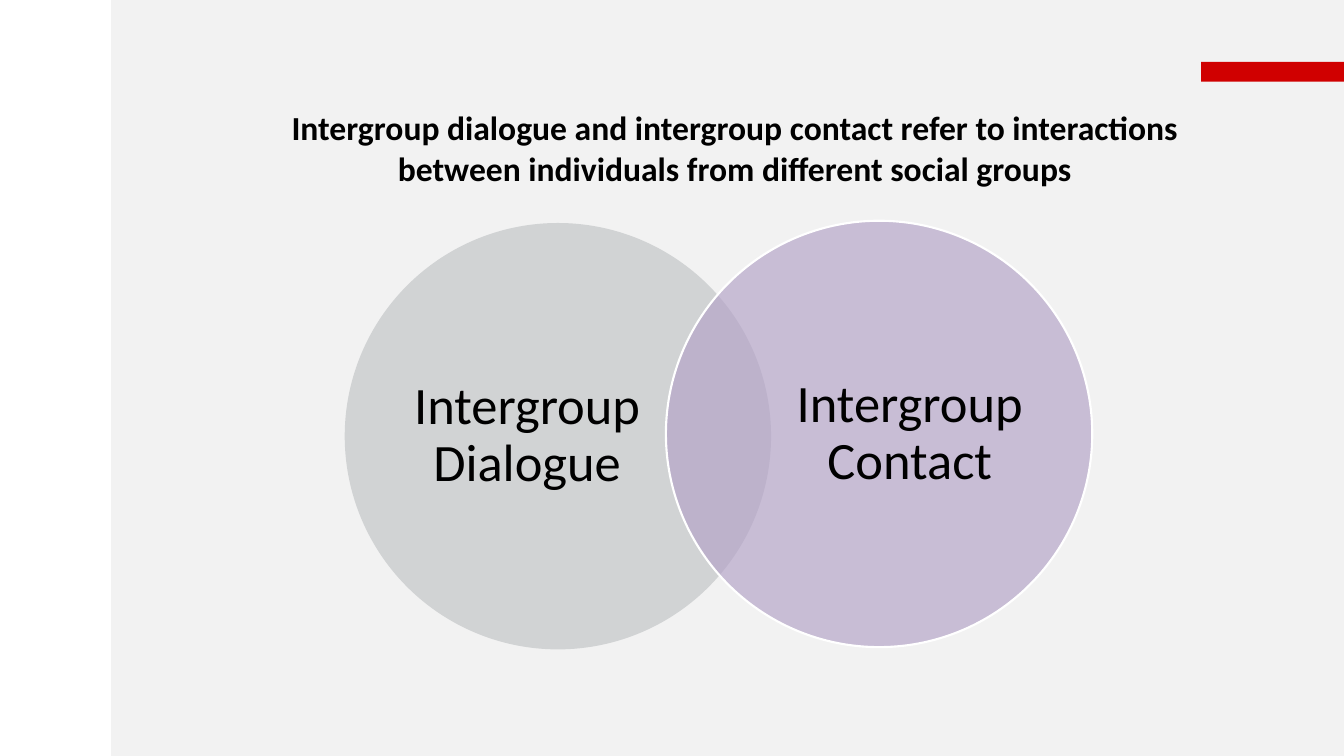
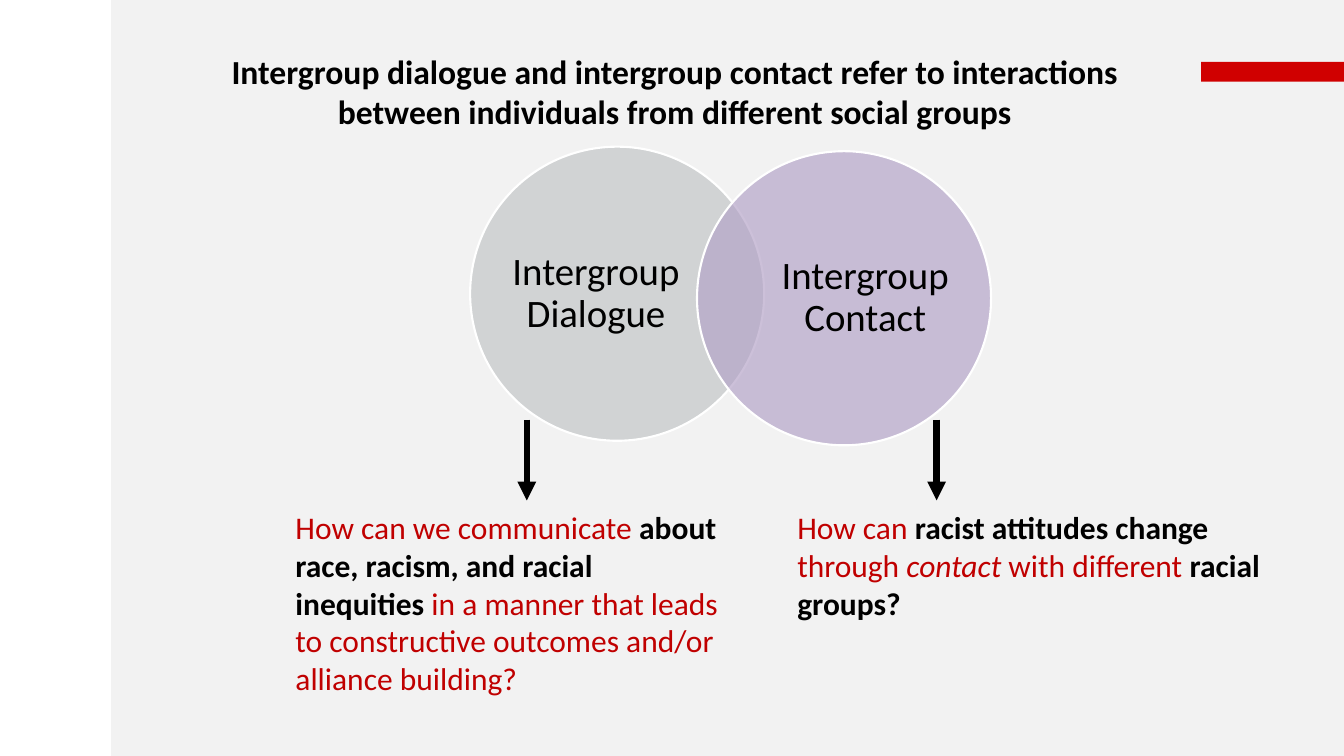
"""Build two slides on how intergroup dialogue and intergroup contact overlap."""
import lxml.etree
import pptx
import pptx.dml.color
import pptx.enum.shapes
import pptx.enum.text
import pptx.oxml
import pptx.oxml.ns
import pptx.util

FONT = "Calibri"
BLACK, WHITE, RED = "000000", "FFFFFF", "C00000"
PANEL, ACCENT, GREY, PURPLE = "F2F2F2", "D00000", "D1D3D4", "B3A2C7"
HEADLINE = ("Intergroup dialogue and intergroup contact refer to interactions "
            "between individuals from different social groups")
CENTER = pptx.enum.text.PP_ALIGN.CENTER
SHAPES = pptx.enum.shapes.MSO_SHAPE
qn = pptx.oxml.ns.qn

deck = pptx.Presentation()
deck.slide_width = pptx.util.Inches(17.78)
deck.slide_height = pptx.util.Inches(10)
title_only = deck.slide_layouts[5]
column, row = deck.slide_width / 100, deck.slide_height / 100


def rgb(color):
    return pptx.dml.color.RGBColor.from_string(color)


def place(left, top, width, height):
    return [round(v) for v in (left * column, top * row, width * column, height * row)]


# Title area, circle size in rows, text size, then (left, top, outlined, opacity) per circle
venns = [
    ((20.02, 14.2, 69.35, 15), 56.4, 50,
     [(25.65, 29.5, False, 100), (49.55, 29.2, True, 66)]),
    ((13.44, 6.7, 73.57, 11.6), 38.9, 37,
     [(34.98, 19.4, True, 100), (51.86, 20, True, 67)]),
]
groups = [("Intergroup Dialogue", GREY, 0.14), ("Intergroup Contact", PURPLE, 0.284)]

for title_area, diameter, label_size, circles in venns:
    slide = deck.slides.add_slide(title_only)
    headline = slide.shapes.title
    headline.left, headline.top, headline.width, headline.height = place(*title_area)
    frame = headline.text_frame
    frame.text = HEADLINE
    frame.word_wrap = True
    frame.auto_size = pptx.enum.text.MSO_AUTO_SIZE.NONE
    frame.vertical_anchor = pptx.enum.text.MSO_ANCHOR.TOP
    frame.margin_left = frame.margin_right = frame.margin_top = frame.margin_bottom = 0
    sentence = frame.paragraphs[0]
    sentence.alignment = CENTER
    sentence.font.name, sentence.font.size = FONT, pptx.util.Pt(32)
    sentence.font.bold, sentence.font.color.rgb = True, rgb(BLACK)

    side = diameter * row / column
    for (left, top, outlined, opacity), (name, color, inset) in zip(circles, groups):
        circle = slide.shapes.add_shape(SHAPES.OVAL, *place(left, top, side, diameter))
        circle.shadow.inherit = False
        circle.fill.solid()
        circle.fill.fore_color.rgb = rgb(color)
        if opacity < 100:
            tint = circle.element.spPr.find(qn("a:solidFill"))[0]
            lxml.etree.SubElement(tint, qn("a:alpha"), val=str(opacity * 1000))
        if outlined:
            circle.line.color.rgb = rgb(WHITE)
            circle.line.width = pptx.util.Pt(2)
        else:
            circle.line.fill.background()

        label = slide.shapes.add_textbox(*place(
            left + inset * side, top + 0.118 * diameter, 0.576 * side, 0.764 * diameter))
        frame = label.text_frame
        frame.text = name
        frame.word_wrap = True
        frame.vertical_anchor = pptx.enum.text.MSO_ANCHOR.MIDDLE
        frame.margin_left = frame.margin_right = frame.margin_top = frame.margin_bottom = 0
        words = frame.paragraphs[0]
        words.alignment, words.line_spacing = CENTER, 0.9
        words.font.name, words.font.size = FONT, pptx.util.Pt(label_size)
        words.font.color.rgb = rgb(BLACK)

# Each question: left, width, height, arrow column, then (text, emphasis) pieces
questions = [
    (21.43, 33.3, 26.3, 39.2, [
        ("How can we communicate ", ""),
        ("about race, racism, and racial inequities ", "bold"),
        ("in a manner that leads to constructive outcomes and/or alliance building?", "")]),
    (58.77, 36.5, 16.2, 69.69, [
        ("How can ", ""), ("racist attitudes change ", "bold"), ("through ", ""),
        ("contact", "italic"), (" with different ", ""), ("racial groups?", "bold")]),
]
for left, width, height, arrow_column, pieces in questions:
    question = slide.shapes.add_textbox(*place(left, 66.7, width, height))
    question.text_frame.word_wrap = True
    wording = question.text_frame.paragraphs[0]
    wording.font.name, wording.font.size = FONT, pptx.util.Pt(30)
    for text, emphasis in pieces:
        piece = wording.add_run()
        piece.text = text
        piece.font.name, piece.font.size = FONT, pptx.util.Pt(30)
        piece.font.bold = emphasis == "bold"
        piece.font.italic = emphasis == "italic"
        piece.font.color.rgb = rgb(BLACK if emphasis == "bold" else RED)

    arrow = slide.shapes.add_connector(
        pptx.enum.shapes.MSO_CONNECTOR.STRAIGHT,
        *place(arrow_column, 55.5, arrow_column, 66.2))
    arrow.line.color.rgb = rgb(BLACK)
    arrow.line.width = pptx.util.Pt(6)
    lxml.etree.SubElement(arrow.line._get_or_add_ln(), qn("a:tailEnd"), type="triangle")
    lxml.etree.SubElement(arrow.element.spPr, qn("a:effectLst"))

# Backdrop parts move to the shared layout, behind its title
for area, color in [((8.27, 0, 91.73, 100), PANEL), ((89.37, 8.2, 10.63, 2.6), ACCENT)]:
    backdrop = slide.shapes.add_shape(SHAPES.RECTANGLE, *place(*area))
    backdrop.shadow.inherit = False
    backdrop.fill.solid()
    backdrop.fill.fore_color.rgb = rgb(color)
    backdrop.line.fill.background()
    title_only.placeholders[0].element.addprevious(backdrop.element)

deck.save("out.pptx")
